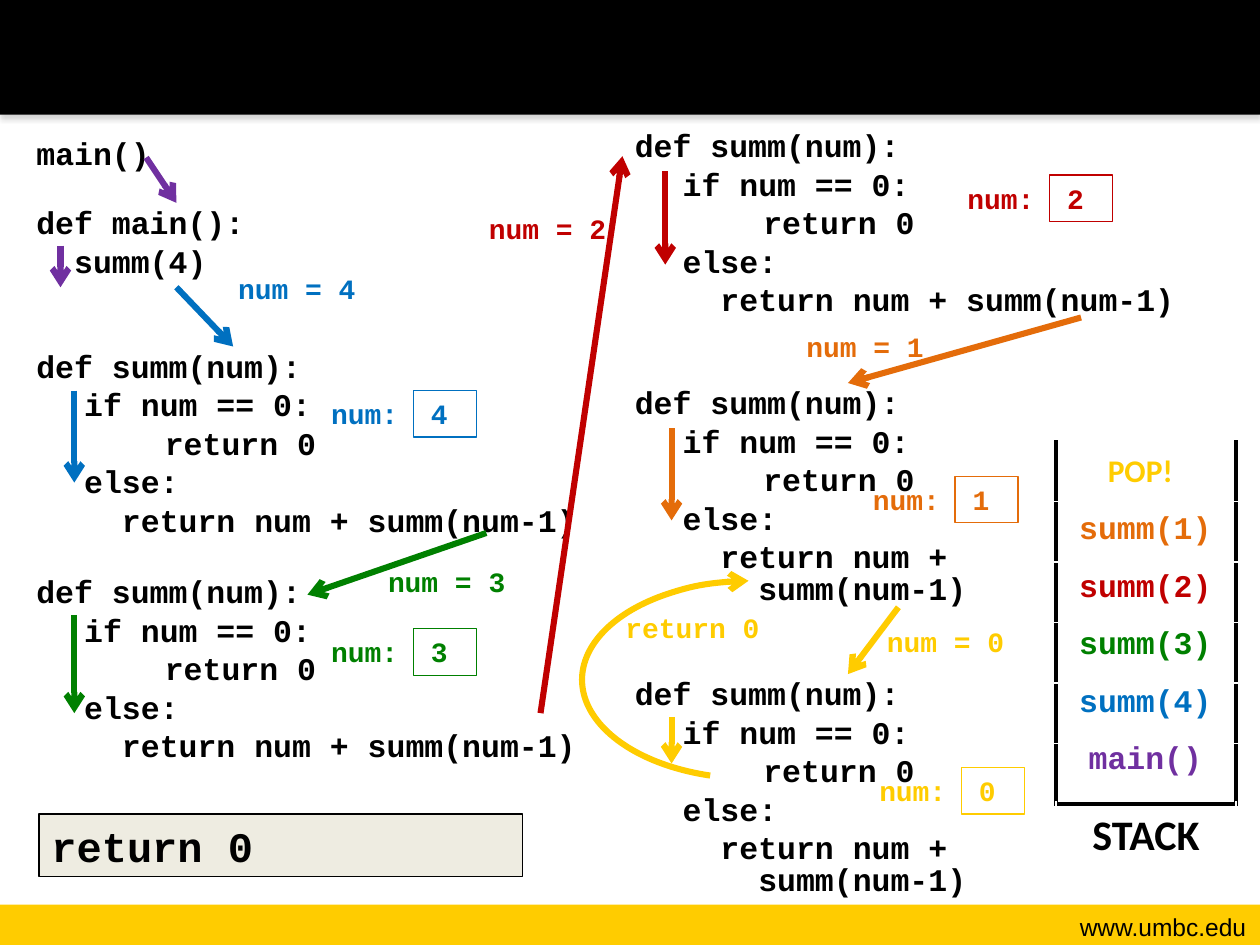
from lxml import etree
from pptx import Presentation
from pptx.dml.color import RGBColor
from pptx.enum.shapes import MSO_CONNECTOR, MSO_SHAPE as Shape
from pptx.enum.text import MSO_ANCHOR as Anchor, PP_ALIGN as Align
from pptx.oxml import parse_xml
from pptx.oxml.ns import nsdecls, qn
from pptx.util import Inches, Pt

BLACK, WHITE, YELLOW = "000000", "FFFFFF", "FFCC00"
PURPLE, BLUE, GREEN, RED, ORANGE = "7030A0", "0070C0", "008000", "C00000", "E46C0A"
CODE_FONT = "Courier New"

color = RGBColor.from_string

presentation = Presentation()
presentation.slide_width, presentation.slide_height = Inches(10), Inches(7.5)
slide = presentation.slides.add_slide(presentation.slide_layouts[6])


def add_text(text, left, top, width, height, *, parent=slide.shapes, size=16, font=CODE_FONT,
             ink=BLACK, bold=True, align=Align.LEFT, anchor=Anchor.TOP, fill=None, line=None,
             inset=0.1, indents=None):
    """Add a text box, or a rectangle when fill or line is given; indents make it a code listing."""
    place = [Inches(value) for value in (left, top, width, height)]
    if fill or line:
        shape = parent.add_shape(Shape.RECTANGLE, *place)
        shape.shadow.inherit = False
        if fill:
            shape.fill.solid()
            shape.fill.fore_color.rgb = color(fill)
        else:
            shape.fill.background()
        if line:
            shape.line.color.rgb = color(line)
            shape.line.width = Pt(0.75)
        else:
            shape.line.fill.background()
    else:
        shape = parent.add_textbox(*place)
    frame = shape.text_frame
    frame.word_wrap = True
    frame.vertical_anchor = anchor
    frame.margin_left = Inches(inset)
    for index, words in enumerate(text.split("\n")):
        paragraph = frame.paragraphs[0] if index == 0 else frame.add_paragraph()
        paragraph.text = words
        paragraph.alignment = align
        if indents:
            paragraph.line_spacing = 0.85
            paragraph.space_before = Pt(3.6 if index else 0)
            paragraph._p.get_or_add_pPr().set("marL", str(Inches(indents[index])))
        paragraph.font.size = Pt(size)
        paragraph.font.name = font
        paragraph.font.bold = bold
        paragraph.font.color.rgb = color(ink)
    return shape


# Header and footer bands
add_text("", 0, 7.18, 10, 0.32, fill=YELLOW)
header = add_text("", 0, 0, 10, 0.91, fill=BLACK)
header._element.spPr.find(qn("a:effectLst")).append(parse_xml(
    f'<a:outerShdw {nsdecls("a")} blurRad="{Pt(3.1)}" dist="{Pt(1.8)}" dir="5400000">'
    '<a:srgbClr val="808080"><a:alpha val="35000"/></a:srgbClr></a:outerShdw>'))
add_text("www.umbc.edu", 8, 7.19, 1.99, 0.34, size=14, font="Arial", bold=False, align=Align.RIGHT)

# Code listings
add_text("main()", 0.19, 1.06, 1.21, 0.39, size=18, indents=[0])
add_text("def main():\n  summ(4)", 0.19, 1.61, 1.9, 0.66, size=18, indents=[0, 0])
summ_start = "def summ(num):\nif num == 0:\n return 0\nelse:\n  return num +"
one_line, two_lines = summ_start + " summ(num-1)", summ_start + "\v    summ(num-1)"
for code, left, top, width, height in [
    (one_line, 0.19, 2.75, 4.5, 1.64),
    (one_line, 0.19, 4.54, 4.5, 1.64),
    (one_line, 4.94, 1, 4.5, 1.64),
    (two_lines, 4.94, 3.04, 3.04, 1.84),
    (two_lines, 4.94, 5.35, 3.04, 1.84),
]:
    add_text(code, left, top, width, height, size=18, indents=[0, 0.38, 0.87, 0.38, 0.38])

# Value of num in each call
for value, left, top, ink in [
    ("4", 2.53, 3.1, BLUE),
    ("3", 2.53, 4.99, GREEN),
    ("2", 7.58, 1.39, RED),
    ("1", 6.83, 3.78, ORANGE),
    ("0", 6.88, 6.09, YELLOW),
]:
    group = slide.shapes.add_group_shape()
    add_text("num:", left, top, 0.75, 0.37, parent=group.shapes, ink=ink)
    add_text(value, left + 0.75, top, 0.5, 0.37, parent=group.shapes, ink=ink, line=ink, inset=0.14)

# Flow arrows
arrows = []
for x1, y1, x2, y2, ink in [
    (1.16, 1.25, 1.4, 1.61, PURPLE),
    (0.48, 1.95, 0.48, 2.28, PURPLE),
    (1.4, 2.28, 1.85, 2.75, BLUE),
    (0.59, 3.1, 0.59, 3.83, BLUE),
    (3.86, 4.23, 2.44, 4.72, GREEN),
    (0.59, 4.88, 0.59, 5.66, GREEN),
    (4.29, 5.66, 4.94, 1.24, RED),
    (5.28, 1.36, 5.28, 2.1, RED),
    (8.58, 2.52, 6.73, 3.04, ORANGE),
    (5.33, 3.4, 5.33, 4.13, ORANGE),
    (7.13, 4.82, 6.73, 5.35, YELLOW),
    (5.33, 5.69, 5.33, 6.06, YELLOW),
]:
    ends = [Inches(value) for value in (x1, y1, x2, y2)]
    arrows.append((slide.shapes.add_connector(MSO_CONNECTOR.STRAIGHT, *ends), ink))

return_arc = slide.shapes.add_shape(Shape.ARC, Inches(4.62), Inches(4.61), Inches(2.7), Inches(1.57))
return_arc.adjustments[0], return_arc.adjustments[1] = 68.19, 160.74
return_arc.fill.background()
arrows.append((return_arc, YELLOW))

for arrow, ink in arrows:
    arrow.line.color.rgb = color(ink)
    arrow.line.width = Pt(3.5)
    etree.SubElement(arrow.line._get_or_add_ln(), qn("a:tailEnd"), type="arrow")
    etree.SubElement(arrow._element.spPr, qn("a:effectLst"))

# Arrow labels
for text, left, top, width, ink in [
    ("num = 4", 1.76, 2.11, 1.19, BLUE),
    ("num = 3", 2.95, 4.43, 1.19, GREEN),
    ("num = 2", 3.75, 1.63, 1.19, RED),
    ("num = 1", 6.27, 2.57, 1.19, ORANGE),
    ("num = 0", 6.91, 4.91, 1.19, YELLOW),
    ("return 0", 4.82, 4.8, 1.35, YELLOW),
]:
    add_text(text, left, top, width, 0.37, ink=ink, align=Align.CENTER)

add_text("return 0", 0.31, 6.46, 3.84, 0.5, size=24, fill="EEECE1", line=BLACK)

# Call stack: an open-topped frame with its caption in the last row
row_count = 7
table = slide.shapes.add_table(row_count, 1, Inches(8.38), Inches(3.5), Inches(1.43), Inches(3.39)).table
table.first_row = table.horz_banding = False
for index, row in enumerate(table.rows):
    row.height = Inches(0.48)
    cell = row.cells[0]
    sides = ["lnL", "lnR"]
    if index == row_count - 2:
        sides.append("lnB")
    elif index == row_count - 1:
        sides = ["lnT"]
    for side in sides:
        cell._tc.get_or_add_tcPr().append(parse_xml(
            f'<a:{side} {nsdecls("a")} w="{Pt(3)}"><a:solidFill>'
            f'<a:srgbClr val="{BLACK}"/></a:solidFill></a:{side}>'))
    cell.fill.background()
caption = table.cell(row_count - 1, 0).text_frame.paragraphs[0]
caption.text = "STACK"
caption.alignment = Align.CENTER
caption.font.size, caption.font.name, caption.font.bold = Pt(24), "Calibri", True
caption.font.color.rgb = color(BLACK)

for index, (text, ink) in enumerate([
    ("POP!", YELLOW), ("summ(1)", ORANGE), ("summ(2)", RED),
    ("summ(3)", GREEN), ("summ(4)", BLUE), ("main()", PURPLE),
]):
    popped = index == 0
    left, width = (8.51, 1.08) if popped else (8.44, 1.3)
    add_text(text, left, 3.5 + index * 0.456, width, 0.46, size=18, ink=ink, fill=WHITE,
             font="Calibri" if popped else CODE_FONT, align=Align.CENTER, anchor=Anchor.MIDDLE)

presentation.save("out.pptx")
